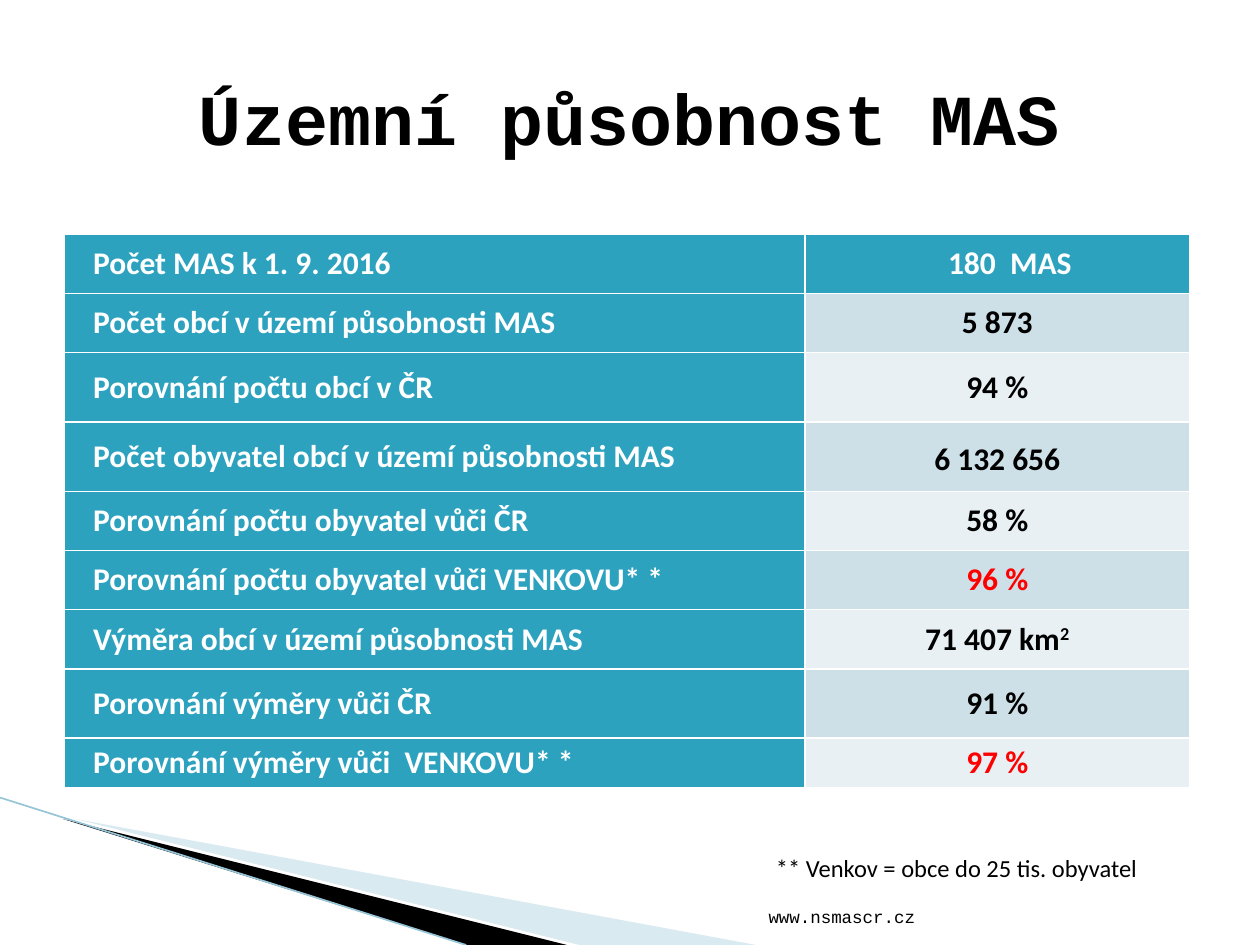
from lxml.etree import SubElement
from pptx import Presentation
from pptx.dml.color import RGBColor
from pptx.enum.shapes import MSO_CONNECTOR
from pptx.enum.text import MSO_ANCHOR, PP_ALIGN
from pptx.oxml.ns import qn
from pptx.util import Inches, Pt

WHITE = RGBColor(0xFF, 0xFF, 0xFF)
BLACK = RGBColor(0x00, 0x00, 0x00)
RED = RGBColor(0xFF, 0x00, 0x00)
TEAL = RGBColor(0x2D, 0xA2, 0xBF)
BAND_DARK = RGBColor(0xCD, 0xE0, 0xE8)
BAND_LIGHT = RGBColor(0xE8, 0xF0, 0xF4)
WEDGE_BLUE = RGBColor(0xA0, 0xCB, 0xDC)
EDGE_BLUE = RGBColor(0x97, 0xC5, 0xD8)

# The slide is a grid of 100 columns by 75 rows
COLUMNS, ROWS = 100, 75
CELL = Inches(0.1)

# Label, value, value colour, row height in grid rows
FIGURES = [
    ("Počet MAS k 1. 9. 2016", "180  MAS", WHITE, 4.7),
    ("Počet obcí v území působnosti MAS", "5 873", BLACK, 4.7),
    ("Porovnání počtu obcí v ČR", "94 %", BLACK, 5.5),
    ("Počet obyvatel obcí v území působnosti MAS", "6 132 656", BLACK, 5.5),
    ("Porovnání počtu obyvatel vůči ČR", "58 %", BLACK, 4.7),
    ("Porovnání počtu obyvatel vůči VENKOVU* *", "96 %", RED, 4.7),
    ("Výměra obcí v území působnosti MAS", "71 407 km", BLACK, 4.7),
    ("Porovnání výměry vůči ČR", "91 %", BLACK, 5.5),
    ("Porovnání výměry vůči  VENKOVU* *", "97 %", RED, 3.9),
]
POPULATION_ROW, AREA_ROW = 3, 6


def grid(cells):
    return round(cells * CELL)


def style(run, size, font, color, bold=False):
    run.font.size = Pt(size)
    run.font.name = font
    run.font.color.rgb = color
    run.font.bold = bold


def add_text(slide, box, text, size, font, align, anchor, bold=False):
    frame = slide.shapes.add_textbox(*map(grid, box)).text_frame
    frame.word_wrap = True
    frame.vertical_anchor = anchor
    paragraph = frame.paragraphs[0]
    paragraph.text = text
    paragraph.alignment = align
    style(paragraph.runs[0], size, font, BLACK, bold)
    return paragraph


def add_wedge(slide, box, points, color, opacity=100):
    left, top = box[:2]
    corners = [(left + x, top + y) for x, y in points]
    builder = slide.shapes.build_freeform(*corners[0], scale=CELL)
    builder.add_line_segments(corners[1:], close=True)
    wedge = builder.convert_to_shape()
    wedge.shadow.inherit = False
    wedge.fill.solid()
    wedge.fill.fore_color.rgb = color
    wedge.line.fill.background()
    if opacity < 100:
        tone = wedge.fill._xPr.find(qn("a:solidFill"))[0]
        SubElement(tone, qn("a:alpha"), val=str(opacity * 1000))


def add_corner_decoration(slide, box):
    left, top, width, height = box
    add_wedge(slide, box, [(5.5, 1.8), (width, height), (45.6, height)],
              WEDGE_BLUE, opacity=40)
    add_wedge(slide, box, [(5.3, 1.6), (45.4, height), (37, height)], BLACK)
    edge = slide.shapes.add_connector(
        MSO_CONNECTOR.STRAIGHT, grid(left), grid(top),
        grid(left + 37), grid(top + height))
    edge.line.color.rgb = EDGE_BLUE
    edge.line.width = Pt(0.95)
    SubElement(edge._element.spPr, qn("a:effectLst"))


def format_cell(cell, text, text_color, fill_color, align):
    cell.margin_left = cell.margin_right = grid(1.4)
    cell.margin_top = cell.margin_bottom = 0
    cell.vertical_anchor = MSO_ANCHOR.MIDDLE
    paragraph = cell.text_frame.paragraphs[0]
    paragraph.text = text
    paragraph.alignment = align
    style(paragraph.runs[0], 18, "Calibri", text_color, True)
    # Borders come before the fill in the cell properties
    properties = cell._tc.get_or_add_tcPr()
    for side in ("a:lnL", "a:lnR", "a:lnT", "a:lnB"):
        border = SubElement(properties, qn(side), w=str(Pt(1)))
        fill = SubElement(border, qn("a:solidFill"))
        SubElement(fill, qn("a:srgbClr"), val=str(WHITE))
    cell.fill.solid()
    cell.fill.fore_color.rgb = fill_color
    return paragraph


def add_figures_table(slide, box):
    table = slide.shapes.add_table(len(FIGURES), 2, *map(grid, box)).table
    label_width = 58.8
    table.columns[0].width = grid(label_width)
    table.columns[1].width = grid(box[2] - label_width)
    for index, (label, value, color, height) in enumerate(FIGURES):
        table.rows[index].height = grid(height)
        label_line = format_cell(table.cell(index, 0), label, WHITE, TEAL,
                                 PP_ALIGN.JUSTIFY)
        label_line._p.get_or_add_pPr().set("marL", str(grid(0.9)))
        band = BAND_DARK if index % 2 else BAND_LIGHT
        value_line = format_cell(table.cell(index, 1), value, color,
                                 band if index else TEAL, PP_ALIGN.CENTER)
        if index == 0:
            value_line._p.get_or_add_pPr().set("indent", str(grid(2)))
        elif index == POPULATION_ROW:
            value_line.line_spacing = 1.15
        elif index == AREA_ROW:
            square = value_line.add_run()
            square.text = "2"
            style(square, 18, "Calibri", color, True)
            square.font._element.set("baseline", "30000")


def add_title(slide, box):
    add_text(slide, box, "Územní působnost MAS", 41, "Courier New",
             PP_ALIGN.CENTER, MSO_ANCHOR.MIDDLE, bold=True)


def add_footer(slide, box):
    add_text(slide, box, "www.nsmascr.cz", 10, "Courier New",
             PP_ALIGN.RIGHT, MSO_ANCHOR.BOTTOM)


def add_footnote(slide, box):
    note = add_text(slide, box, "** Venkov = obce do 25 tis. obyvatel", 14,
                    "Calibri", PP_ALIGN.LEFT, MSO_ANCHOR.TOP)
    note._p.get_or_add_pPr().set("marL", str(grid(50)))


def main():
    presentation = Presentation()
    presentation.slide_width = grid(COLUMNS)
    presentation.slide_height = grid(ROWS)
    slide = presentation.slides.add_slide(presentation.slide_layouts[6])
    add_corner_decoration(slide, (0, 63.3, 59.5, 11.7))
    add_figures_table(slide, (5.1, 18.6, 89.3, 43.9))
    add_footer(slide, (47.9, 70.1, 25.7, 4))
    add_title(slide, (5, 3, 90, 12.5))
    add_footnote(slide, (10.6, 67.2, 88.5, 3.4))
    presentation.save("out.pptx")


if __name__ == "__main__":
    main()
